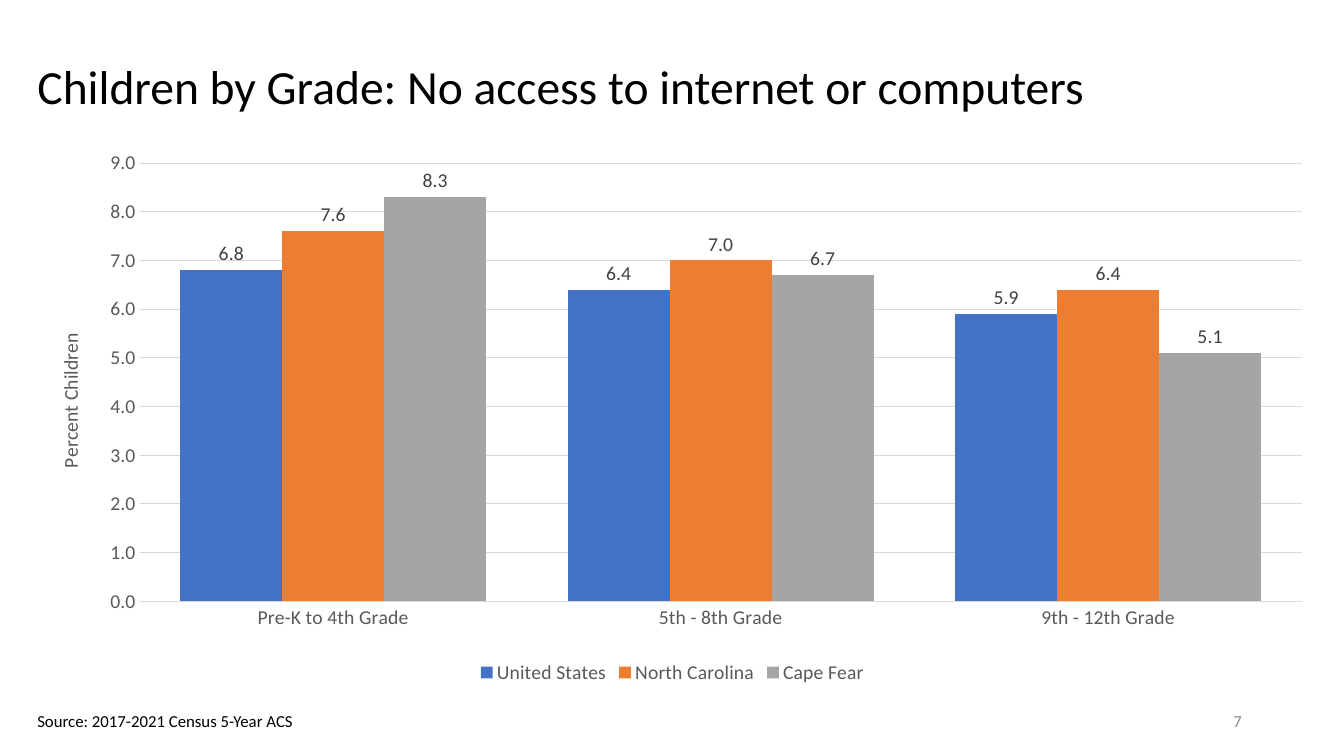
"""Builds a slide with a column chart of children lacking internet or computers."""
from lxml import etree
from pptx import Presentation
from pptx.chart.data import CategoryChartData
from pptx.dml.color import RGBColor
from pptx.enum.chart import XL_CHART_TYPE as Kind, XL_LABEL_POSITION as Spot
from pptx.enum.chart import XL_LEGEND_POSITION as Side, XL_TICK_MARK as Tick
from pptx.enum.text import MSO_ANCHOR as Anchor, MSO_AUTO_SIZE as Fit, PP_ALIGN as Align
from pptx.oxml.ns import qn
from pptx.util import Cm, Pt

BLACK = RGBColor(0x00, 0x00, 0x00)
DARK = RGBColor(0x40, 0x40, 0x40)
GRAY = RGBColor(0x59, 0x59, 0x59)
MUTED = RGBColor(0x8C, 0x8C, 0x8C)
RULE = RGBColor(0xD9, 0xD9, 0xD9)
BLUE = RGBColor(0x44, 0x72, 0xC4)
ORANGE = RGBColor(0xED, 0x7D, 0x31)
SILVER = RGBColor(0xA5, 0xA5, 0xA5)
FORMAT = "#,##0.0"


def style(font, size, color):
    font.name, font.size, font.bold = "Calibri", Pt(size), False
    font.color.rgb = color


def place(node, index, **parts):
    old = node.find(qn("c:layout"))
    if old is not None:
        node.remove(old)
    layout = etree.Element(qn("c:layout"))
    manual = etree.SubElement(layout, qn("c:manualLayout"))
    for tag, val in parts.items():
        etree.SubElement(manual, qn(f"c:{tag}")).set("val", str(val))
    node.insert(index, layout)


deck = Presentation()
deck.slide_width, deck.slide_height = Cm(33.87), Cm(19.05)
slide = deck.slides.add_slide(deck.slide_layouts[5])

title = slide.shapes.title
title.left, title.top, title.width, title.height = Cm(0.69), Cm(0.86), Cm(32.41), Cm(2.77)
frame = title.text_frame
frame.text = "Children by Grade: No access to internet or computers"
frame.auto_size, frame.vertical_anchor = Fit.NONE, Anchor.MIDDLE
para = frame.paragraphs[0]
para.alignment, para.line_spacing = Align.LEFT, 0.9
style(para.runs[0].font, 34, BLACK)

notes = [
    ("7", (23.93, 17.65, 7.62, 1.02), Align.RIGHT, Anchor.MIDDLE, MUTED, True),
    ("Source: 2017-2021 Census 5-Year ACS", (0.69, 17.78, 7.06, 0.77),
     Align.LEFT, Anchor.TOP, BLACK, False),
]
for text, spot, align, anchor, color, wrap in notes:
    frame = slide.shapes.add_textbox(*map(Cm, spot)).text_frame
    frame.text = text
    frame.word_wrap, frame.vertical_anchor = wrap, anchor
    frame.paragraphs[0].alignment = align
    style(frame.paragraphs[0].runs[0].font, 12, color)

data = CategoryChartData(number_format=FORMAT)
data.categories = ["Pre-K to 4th Grade", "5th - 8th Grade", "9th - 12th Grade"]
data.add_series("United States", (6.8, 6.4, 5.9))
data.add_series("North Carolina", (7.6, 7.0, 6.4))
data.add_series("Cape Fear", (8.3, 6.7, 5.1))
chart = slide.shapes.add_chart(
    Kind.COLUMN_CLUSTERED, Cm(0.69), Cm(3.63), Cm(32.51), Cm(13.72), data).chart
style(chart.font, 14, BLACK)
chart.has_title = False
chart.has_legend = True
chart.legend.position, chart.legend.include_in_layout = Side.BOTTOM, False
style(chart.legend.font, 14, GRAY)

plot = chart.plots[0]
plot.gap_width, plot.overlap, plot.vary_by_categories = 80, 0, False
for series, color in zip(plot.series, (BLUE, ORANGE, SILVER)):
    series.format.fill.solid()
    series.format.fill.fore_color.rgb = color
    labels = series.data_labels
    labels.show_value, labels.position = True, Spot.OUTSIDE_END
    labels.number_format, labels.number_format_is_linked = FORMAT, False
    style(labels.font, 14, DARK)

cats, vals = chart.category_axis, chart.value_axis
for axis in (cats, vals):
    axis.major_tick_mark = axis.minor_tick_mark = Tick.NONE
    style(axis.tick_labels.font, 14, GRAY)
vals.minimum_scale, vals.maximum_scale, vals.major_unit = 0, 9, 1
vals.tick_labels.number_format = FORMAT
vals.tick_labels.number_format_is_linked = False
vals.format.line.fill.background()
for line in (cats.format.line, vals.major_gridlines.format.line):
    line.color.rgb, line.width = RULE, Pt(0.75)

name = vals.axis_title
name.text_frame.text = "Percent Children"
style(name.text_frame.paragraphs[0].runs[0].font, 14, GRAY)
body = name._element.find(".//" + qn("a:bodyPr"))
body.set("rot", "-5400000")
body.set("vert", "horz")
place(name._element, 1, xMode="edge", yMode="edge", x=0.02, y=0.34)
place(chart._chartSpace.find(".//" + qn("c:plotArea")), 0, layoutTarget="inner",
      xMode="edge", yMode="edge", x=0.087, y=0.035, w=0.901, h=0.805)

deck.save("out.pptx")
